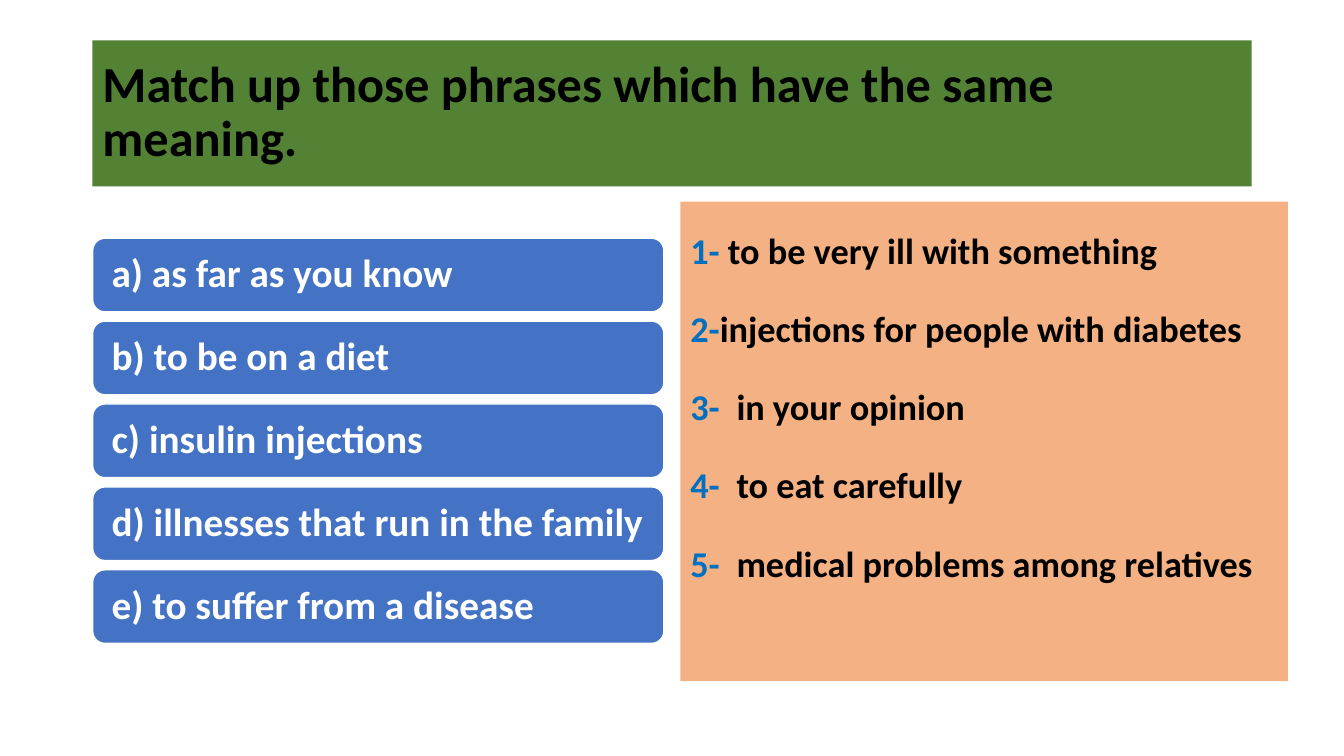
from lxml.etree import SubElement
from pptx import Presentation
from pptx.dml.color import RGBColor
from pptx.enum.shapes import MSO_SHAPE
from pptx.enum.text import MSO_ANCHOR, MSO_AUTO_SIZE, PP_ALIGN
from pptx.oxml.ns import qn
from pptx.util import Pt

BLACK = RGBColor(0x00, 0x00, 0x00)
WHITE = RGBColor(0xFF, 0xFF, 0xFF)
GREEN = RGBColor(0x54, 0x82, 0x35)
BLUE = RGBColor(0x44, 0x72, 0xC4)
PEACH = RGBColor(0xF4, 0xB1, 0x83)
NUMBER_BLUE = RGBColor(0x00, 0x70, 0xC0)

PHRASES = [
    "a) as far as you know",
    "b) to be on a diet",
    "c) insulin injections",
    "d) illnesses that run in the family",
    "e) to suffer from a disease",
]
MEANINGS = [
    ("1-", " to be very ill with something"),
    ("2-", "injections for people with diabetes"),
    ("3-", "\tin your opinion"),
    ("4-", "\tto eat carefully"),
    ("5-", "\tmedical problems among relatives"),
]


def add_text(p, text, size=28, color=BLACK, bold=True, font="Calibri"):
    r = p.add_run()
    r.text = text
    r.font.name = font
    r.font.size = Pt(size)
    r.font.bold = bold
    r.font.color.rgb = color


def add_tab_stop(p, position):
    tabs = SubElement(p._p.get_or_add_pPr(), qn("a:tabLst"))
    SubElement(tabs, qn("a:tab"), pos=str(Pt(position)), algn="l")


class MatchingSlide:
    def __init__(self, prs):
        self.s = prs.slides.add_slide(prs.slide_layouts[5])

    def frame(self, sp, anchor, inset=7.2):
        """Set up the shape's text frame and return it."""
        tf = sp.text_frame
        tf.word_wrap = True
        tf.auto_size = MSO_AUTO_SIZE.NONE
        tf.vertical_anchor = anchor
        tf.margin_left = tf.margin_right = Pt(inset)
        tf.margin_top = tf.margin_bottom = Pt(3.6)
        return tf

    def title(self, text, left, top, width, height):
        sp = self.s.shapes.title
        sp.left, sp.top, sp.width, sp.height = map(Pt, (left, top, width, height))
        sp.fill.solid()
        sp.fill.fore_color.rgb = GREEN
        p = self.frame(sp, MSO_ANCHOR.MIDDLE).paragraphs[0]
        p.alignment = PP_ALIGN.LEFT
        p.line_spacing = 0.9
        add_text(p, text, size=36)

    def phrase(self, text, left, top, width, height):
        sp = self.s.shapes.add_shape(
            MSO_SHAPE.ROUNDED_RECTANGLE, *map(Pt, (left, top, width, height)))
        sp.shadow.inherit = False
        sp.fill.solid()
        sp.fill.fore_color.rgb = BLUE
        sp.line.color.rgb = WHITE
        sp.line.width = Pt(1)
        p = self.frame(sp, MSO_ANCHOR.MIDDLE, inset=11).paragraphs[0]
        p.alignment = PP_ALIGN.LEFT
        p.line_spacing = 0.9
        add_text(p, text, color=WHITE)

    def meanings(self, items, left, top, width, height):
        sp = self.s.shapes.add_textbox(*map(Pt, (left, top, width, height)))
        sp.fill.solid()
        sp.fill.fore_color.rgb = PEACH
        tf = self.frame(sp, MSO_ANCHOR.TOP)
        for i, (number, text) in enumerate(items):
            p = tf.add_paragraph() if i else tf.paragraphs[0]
            p.alignment = PP_ALIGN.JUSTIFY
            p.line_spacing = 1.5
            if i:
                p.space_before = Pt(9.2)
            if text.startswith("\t"):
                add_tab_stop(p, 33)
            add_text(p, number, size=25.9, color=NUMBER_BLUE)
            add_text(p, text, size=25.9)


def main():
    prs = Presentation()
    prs.slide_width, prs.slide_height = Pt(960), Pt(540)
    slide = MatchingSlide(prs)
    slide.title("Match up those phrases which have the same meaning.",
                66, 28.8, 828, 104.4)
    for i, text in enumerate(PHRASES):
        slide.phrase(text, 66.2, 170.2 + 59.2 * i, 408, 52.6)
    slide.meanings(MEANINGS, 486, 144, 434, 342.6)
    prs.save("out.pptx")


if __name__ == "__main__":
    main()
